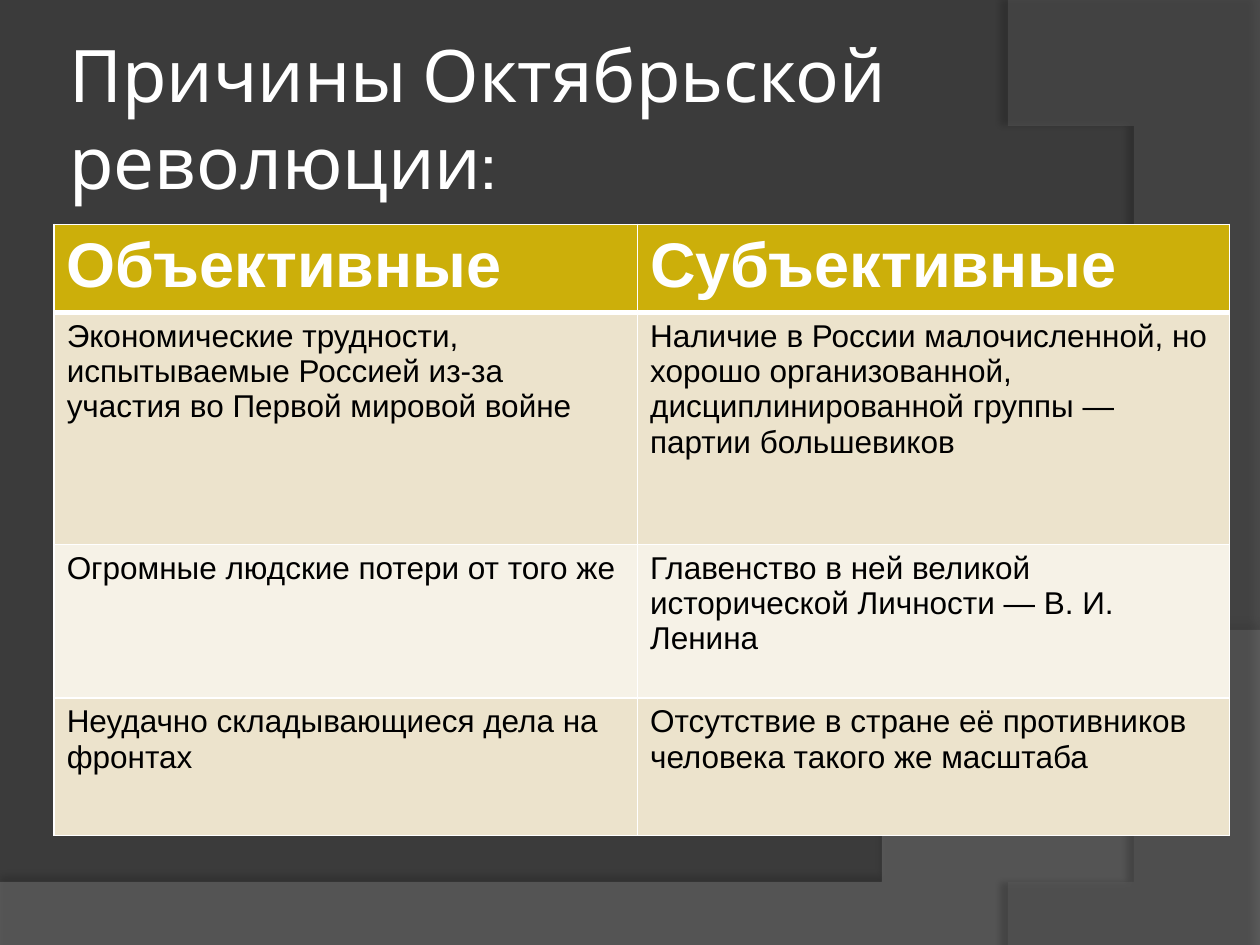
from lxml import etree
from pptx import Presentation
from pptx import util as u
from pptx.dml.color import RGBColor
from pptx.enum import text
from pptx.oxml import parse_xml
from pptx.oxml.ns import qn

NS = 'xmlns:a="http://schemas.openxmlformats.org/drawingml/2006/main"'
DARK = RGBColor(0x3B, 0x3B, 0x3B)
GREY = RGBColor(0x7F, 0x7F, 0x7F)
MID_GREY = RGBColor(0x5E, 0x5E, 0x5E)
WHITE = RGBColor(0xFF, 0xFF, 0xFF)
BLACK = RGBColor(0, 0, 0)
GOLD = RGBColor(0xCC, 0xAF, 0x0A)
SAND = RGBColor(0xEC, 0xE3, 0xCC)
CREAM = RGBColor(0xF6, 0xF2, 0xE7)


def bezier(points, steps=60):
    a, b, c, d = points
    for i in range(steps + 1):
        t = i / steps
        v = 1 - t
        yield tuple(v**3 * a[k] + 3 * v * v * t * b[k] + 3 * v * t * t * c[k] + t**3 * d[k]
                    for k in (0, 1))


prs = Presentation()
prs.slide_width, prs.slide_height = u.Inches(10), u.Inches(7.5)
s = prs.slides.add_slide(prs.slide_layouts[6])
s.background.fill.solid()
s.background.fill.fore_color.rgb = DARK

waves = [
    ([(10, 5.2), (5.59, 7.29), (3.91, 7.19), (0, 7.05)], [(0, 7.5), (10, 7.5)], GREY, 45, 35, 3.5, 270),
    ([(8.21, 7.5), (9.35, 6.19), (10.18, 3), (8, 0)], [(10, 0.02), (10, 7.5)], MID_GREY, 40, 45, 4, 180),
]
for curve, corners, color, opacity, shade, dist, angle in waves:
    outline = list(bezier(curve)) + corners
    builder = s.shapes.build_freeform(*outline[0], scale=u.Inches(1))
    builder.add_line_segments(outline[1:], close=True)
    sp = builder.convert_to_shape()
    sp.fill.solid()
    sp.fill.fore_color.rgb = color
    sp.line.fill.background()
    sp.shadow.inherit = False
    srgb = sp._element.spPr.find(qn("a:solidFill"))[0]
    etree.SubElement(srgb, qn("a:alpha"), val=str(opacity * 1000))
    sp._element.spPr.find(qn("a:effectLst")).append(parse_xml(
        f'<a:outerShdw {NS} blurRad="{u.Pt(4)}" dist="{u.Pt(dist)}" dir="{angle * 60000}" '
        f'algn="ctr" rotWithShape="0"><a:srgbClr val="000000"><a:alpha val="{shade * 1000}"/>'
        '</a:srgbClr></a:outerShdw>'))

tf = s.shapes.add_textbox(u.Inches(0.5), u.Inches(0.3), u.Inches(8.17), u.Inches(1.25)).text_frame
tf.word_wrap = True
tf.vertical_anchor = text.MSO_ANCHOR.MIDDLE
tf.margin_left = tf.margin_right = tf.margin_top = tf.margin_bottom = u.Inches(0.05)
p = tf.paragraphs[0]
p.text = "Причины Октябрьской революции:"
p.font.name, p.font.size, p.font.color.rgb = "Cabin", u.Pt(41.4), WHITE

rows = [
    ("Объективные", "Субъективные"),
    ("Экономические трудности, испытываемые Россией из-за участия во Первой мировой войне",
     "Наличие в России малочисленной, но хорошо организованной, дисциплинированной группы — "
     "партии большевиков"),
    ("Огромные людские потери от того же",
     "Главенство в ней великой исторической Личности — В. И. Ленина"),
    ("Неудачно складывающиеся дела на фронтах",
     "Отсутствие в стране её противников человека такого же масштаба"),
]
widths = [4.63, 4.7]
heights = [0.66, 1.84, 1.22, 1.09]
fills = [GOLD, SAND, CREAM, SAND]
table = s.shapes.add_table(len(rows), len(widths), u.Inches(0.43), u.Inches(1.78),
                           u.Inches(sum(widths)), u.Inches(sum(heights))).table
for column, width in zip(table.columns, widths):
    column.width = u.Inches(width)
for i, (row, height) in enumerate(zip(table.rows, heights)):
    row.height = u.Inches(height)
    header = i == 0
    for cell, words in zip(row.cells, rows[i]):
        cell.fill.solid()
        cell.fill.fore_color.rgb = fills[i]
        p = cell.text_frame.paragraphs[0]
        p.text = words
        p.font.name, p.font.bold = "Arial", header
        p.font.size = u.Pt(36 if header else 18)
        p.font.color.rgb = WHITE if header else BLACK
        for k, side in enumerate("LRTB"):
            thick = (header and side == "B") or (i == 1 and side == "T")
            cell._tc.tcPr.insert(k, parse_xml(
                f'<a:ln{side} {NS} w="{u.Pt(3 if thick else 1)}"><a:solidFill>'
                f'<a:srgbClr val="{WHITE}"/></a:solidFill></a:ln{side}>'))

prs.save("out.pptx")
